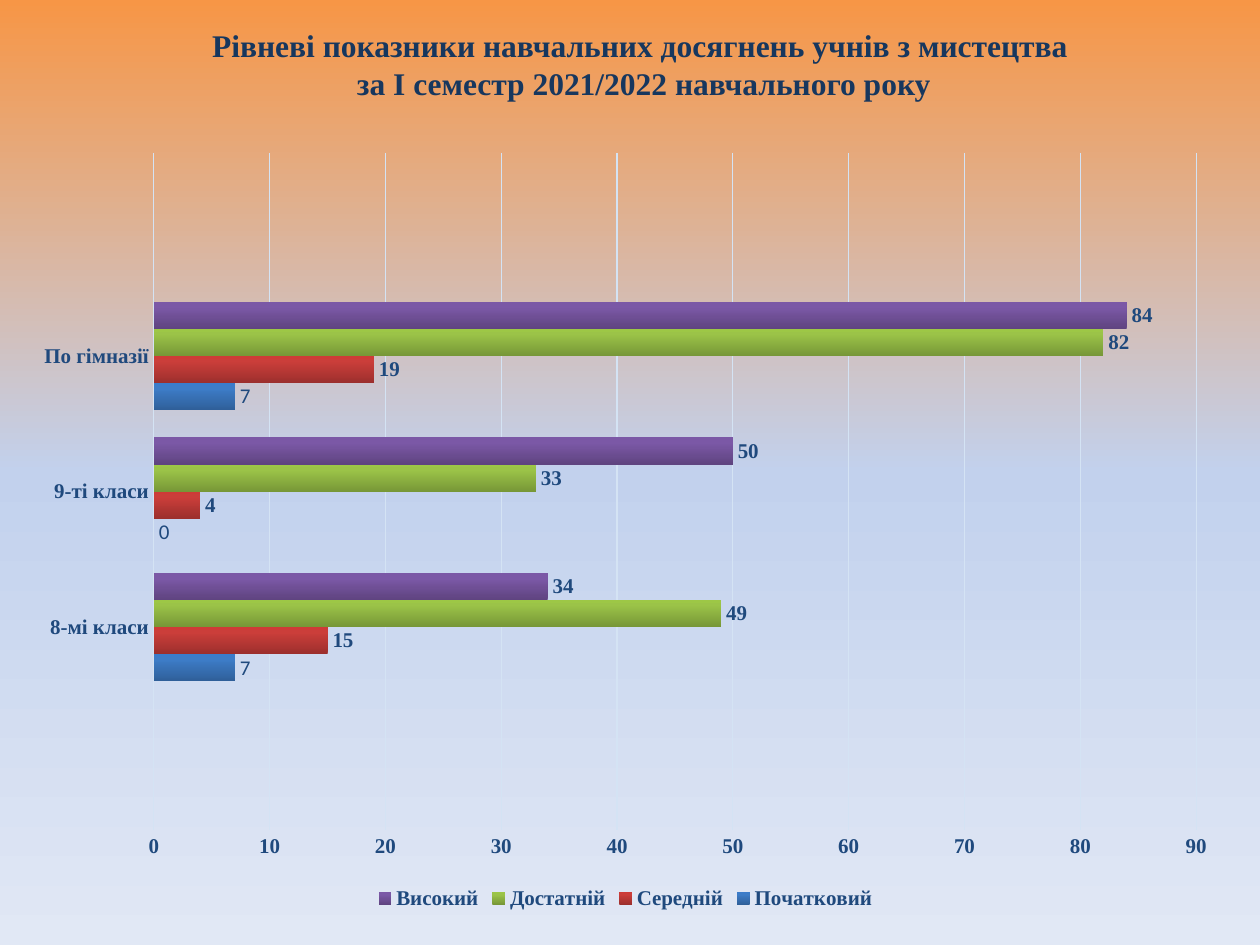
from copy import deepcopy
from typing import NamedTuple

from pptx import Presentation
from pptx.chart.data import CategoryChartData
from pptx.dml.color import RGBColor
from pptx.dml.fill import FillFormat
from pptx.enum.chart import XL_CHART_TYPE, XL_LABEL_POSITION, XL_LEGEND_POSITION, XL_TICK_MARK
from pptx.enum.text import MSO_ANCHOR, PP_ALIGN
from pptx.oxml.xmlchemy import BaseOxmlElement
from pptx.text.text import Font
from pptx.util import Inches, Pt

SERIF = "Times New Roman"
SANS = "Calibri"
TEXT_BLUE = "1F497D"
GRID_BLUE = "D4E3F4"
CATEGORIES = ["", "8-мі класи", "9-ті класи", "По гімназії", ""]


class Stop(NamedTuple):
    percent: int
    color: str


class Level(NamedTuple):
    name: str
    values: list[int | None]
    colors: tuple[str, str, str]
    label_font: str = SERIF
    label_bold: bool = True


LEVELS = [
    Level("Початковий", [None, 7, 0, 7, None], ("2F5F99", "3D7CC7", "3A7CCB"), SANS, False),
    Level("Середній", [None, 15, 4, 19, None], ("9C2F2D", "CB3E3A", "CE3B37")),
    Level("Достатній", [None, 49, 33, 82, None], ("779737", "9BC348", "9DC746")),
    Level("Високий", [None, 34, 50, 84, None], ("5F4480", "7B58A6", "7C57A8")),
]


def rgb(color: str) -> RGBColor:
    return RGBColor.from_string(color)


def set_font(font: Font, size: int, color: str = TEXT_BLUE,
             name: str = SERIF, bold: bool = True) -> None:
    font.name, font.size, font.bold = name, Pt(size), bold
    font.color.rgb = rgb(color)


def set_gradient(fill: FillFormat, owner: BaseOxmlElement, stops: list[Stop], angle: int) -> None:
    """Fill with any number of stops; owner is the element that holds the fill."""
    fill.gradient()
    fill.gradient_angle = angle
    stop_list = owner.xpath(".//a:gsLst")[0]
    while len(stop_list) < len(stops):
        stop_list.append(deepcopy(stop_list[0]))
    for target, stop in zip(fill.gradient_stops, stops):
        target.position = stop.percent / 100
        target.color.rgb = rgb(stop.color)


def add_title(slide) -> None:
    sp = slide.shapes.add_textbox(Inches(0.47), Inches(0.23), Inches(9.22), Inches(0.55))
    tf = sp.text_frame
    tf.word_wrap = True
    tf.vertical_anchor = MSO_ANCHOR.MIDDLE
    p = tf.paragraphs[0]
    p.text = ("Рівневі показники навчальних досягнень учнів з мистецтва\v"
              " за І семестр 2021/2022 навчального року")
    p.alignment = PP_ALIGN.CENTER
    set_font(p.font, 18, "17375E")


def add_level_chart(slide) -> None:
    data = CategoryChartData()
    data.categories = CATEGORIES
    for level in LEVELS:
        data.add_series(level.name, level.values)
    chart = slide.shapes.add_chart(XL_CHART_TYPE.BAR_CLUSTERED, Inches(0.16), Inches(1.09),
                                   Inches(9.61), Inches(6.17), data).chart
    set_font(chart.font, 10, "000000", SANS, False)
    chart.has_title = False
    chart.has_legend = True
    chart.legend.position = XL_LEGEND_POSITION.BOTTOM
    chart.legend.include_in_layout = False
    set_font(chart.legend.font, 12)

    for axis in (chart.category_axis, chart.value_axis):
        axis.major_tick_mark = axis.minor_tick_mark = XL_TICK_MARK.NONE
        set_font(axis.tick_labels.font, 12)
    chart.value_axis.format.line.fill.background()
    chart.value_axis.has_major_gridlines = True
    for line in (chart.category_axis.format.line, chart.value_axis.major_gridlines.format.line):
        line.color.rgb = rgb(GRID_BLUE)
        line.width = Pt(0.75)

    plot = chart.plots[0]
    plot.gap_width = 100
    plot.vary_by_categories = False
    for series, level in zip(plot.series, LEVELS):
        stops = [Stop(*pair) for pair in zip((0, 80, 100), level.colors)]
        set_gradient(series.format.fill, series.format.element if hasattr(series.format, "element")
                     else series._element, stops, 90)
        labels = series.data_labels
        labels.show_value = True
        labels.position = XL_LABEL_POSITION.OUTSIDE_END
        set_font(labels.font, 12, name=level.label_font, bold=level.label_bold)


def main() -> None:
    prs = Presentation()
    prs.slide_width, prs.slide_height = Inches(10), Inches(7.5)
    slide = prs.slides.add_slide(prs.slide_layouts[6])
    set_gradient(slide.background.fill, slide.element,
                 [Stop(0, "F79646"), Stop(50, "C2D1ED"), Stop(100, "E1E8F5")], 270)
    add_title(slide)
    add_level_chart(slide)
    prs.save("out.pptx")


if __name__ == "__main__":
    main()
